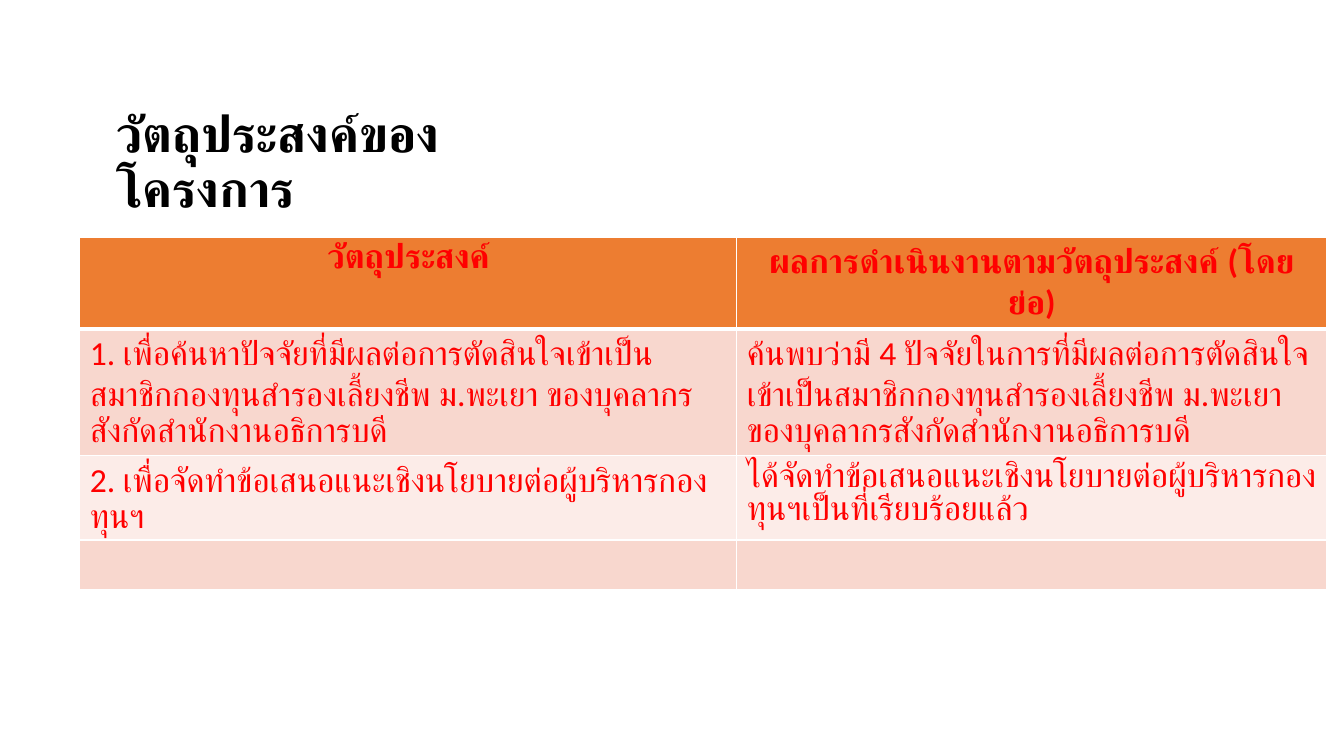
"""Build the slide of project objectives and their results."""
from lxml.etree import SubElement
from pptx import Presentation
from pptx.dml.color import RGBColor
from pptx.enum.text import MSO_ANCHOR, MSO_AUTO_SIZE, PP_ALIGN
from pptx.oxml.ns import qn
from pptx.util import Cm, Pt

TITLE = "วัตถุประสงค์ของโครงการ"
ROWS = [
    ("วัตถุประสงค์", "ผลการดำเนินงานตามวัตถุประสงค์ (โดยย่อ)"),
    ("1. เพื่อค้นหาปัจจัยที่มีผลต่อการตัดสินใจเข้าเป็นสมาชิกกองทุนสำรองเลี้ยงชีพ ม.พะเยา ของบุคลากรสังกัดสำนักงานอธิการบดี",
     "ค้นพบว่ามี 4 ปัจจัยในการที่มีผลต่อการตัดสินใจเข้าเป็นสมาชิกกองทุนสำรองเลี้ยงชีพ ม.พะเยา ของบุคลากรสังกัดสำนักงานอธิการบดี"),
    ("2. เพื่อจัดทำข้อเสนอแนะเชิงนโยบายต่อผู้บริหารกองทุนฯ",
     "ได้จัดทำข้อเสนอแนะเชิงนโยบายต่อผู้บริหารกองทุนฯเป็นที่เรียบร้อยแล้ว"),
    ("", ""),
]
COL_WIDTHS = (16.56, 14.86)
ROW_HEIGHTS = (2.31, 3.18, 2.13, 1.24)
HEADER_FILL, BANDS = "ED7D31", ("FCECE8", "F8D7CE")


def color(value):
    return RGBColor.from_string(value)


def style(p, size, rgb, bold):
    for r in p.runs:
        r.font.name, r.font.size, r.font.bold = "Calibri", Pt(size), bold
        r.font.color.rgb = color(rgb)


def add_borders(cell, bottom):
    tc_pr = cell._tc.get_or_add_tcPr()
    for i, (side, width) in enumerate((("L", 1), ("R", 1), ("T", 1), ("B", bottom))):
        ln = tc_pr.makeelement(qn(f"a:ln{side}"), {"w": str(Pt(width))})
        fill = SubElement(ln, qn("a:solidFill"))
        SubElement(fill, qn("a:srgbClr"), val="FFFFFF")
        tc_pr.insert(i, ln)


def add_title(s):
    title = s.shapes.title
    title.left, title.top, title.width, title.height = Cm(2.67), Cm(2.29), Cm(9.37), Cm(3.68)
    tf = title.text_frame
    tf.text = TITLE
    tf.word_wrap, tf.auto_size = True, MSO_AUTO_SIZE.NONE
    tf.vertical_anchor = MSO_ANCHOR.MIDDLE
    p = tf.paragraphs[0]
    p.alignment, p.line_spacing = PP_ALIGN.LEFT, 0.9
    style(p, 36, "000000", True)


def add_objectives(s):
    table = s.shapes.add_table(len(ROWS), len(COL_WIDTHS), Cm(2.01), Cm(5.97),
                               Cm(sum(COL_WIDTHS)), Cm(sum(ROW_HEIGHTS))).table
    for col, width in zip(table.columns, COL_WIDTHS):
        col.width = Cm(width)
    for i, (texts, height) in enumerate(zip(ROWS, ROW_HEIGHTS)):
        table.rows[i].height = Cm(height)
        header = i == 0
        for j, text in enumerate(texts):
            cell = table.cell(i, j)
            cell.text = text
            cell.fill.solid()
            cell.fill.fore_color.rgb = color(HEADER_FILL if header else BANDS[i % 2])
            add_borders(cell, 3 if header else 1)
            p = cell.text_frame.paragraphs[0]
            p.alignment = PP_ALIGN.CENTER if header else PP_ALIGN.LEFT
            style(p, 24, "FF0000", header)


def main():
    prs = Presentation()
    prs.slide_width, prs.slide_height = Cm(33.87), Cm(19.05)
    s = prs.slides.add_slide(prs.slide_layouts[5])
    add_title(s)
    add_objectives(s)
    prs.save("out.pptx")


if __name__ == "__main__":
    main()
